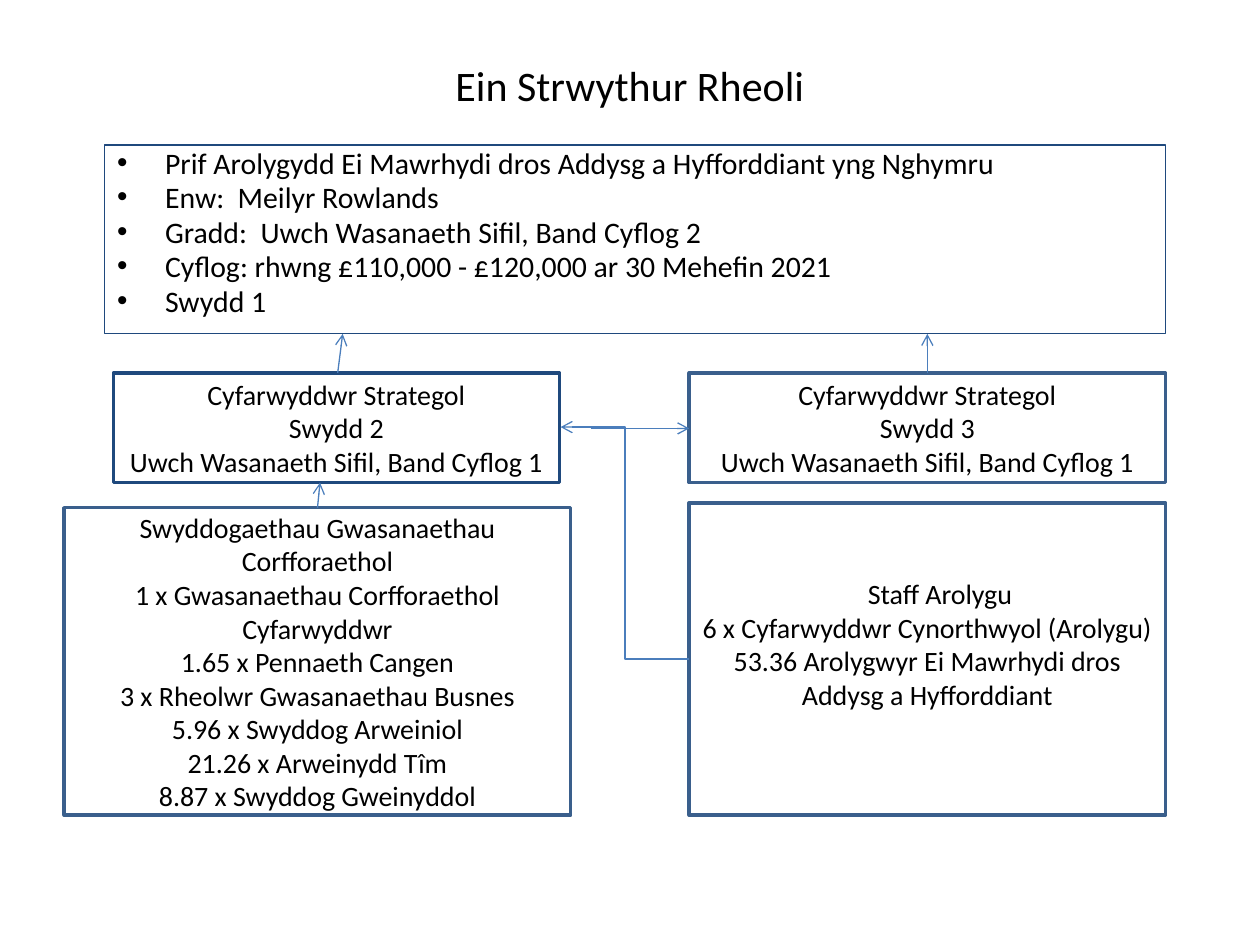
"""Build the management structure slide."""
from lxml import etree
from pptx import Presentation
from pptx import util as u
from pptx.dml.color import RGBColor
from pptx.enum import shapes, text
from pptx.oxml.ns import qn

COLORS = {"navy": "1F497D", "steel": "3A5F8C", "arrow": "4B7EBC", "ink": "000000"}
FONT = "Calibri"
TITLE = "Ein Strwythur Rheoli"
HEAD = [
    "Prif Arolygydd Ei Mawrhydi dros Addysg a Hyfforddiant yng Nghymru",
    "Enw:  Meilyr Rowlands",
    "Gradd:  Uwch Wasanaeth Sifil, Band Cyflog 2",
    "Cyflog: rhwng £110,000 - £120,000 ar 30 Mehefin 2021",
    "Swydd 1",
]
DIRECTOR, BAND = "Cyfarwyddwr Strategol", "Uwch Wasanaeth Sifil, Band Cyflog 1"
CORPORATE = [
    "Swyddogaethau Gwasanaethau Corfforaethol",
    "1 x Gwasanaethau Corfforaethol Cyfarwyddwr",
    "1.65 x Pennaeth Cangen",
    "3 x Rheolwr Gwasanaethau Busnes",
    "5.96 x Swyddog Arweiniol",
    "21.26 x Arweinydd Tîm",
    "8.87 x Swyddog Gweinyddol",
]
INSPECTION = [
    "Staff Arolygu",
    "6 x Cyfarwyddwr Cynorthwyol (Arolygu)",
    "53.36 Arolygwyr Ei Mawrhydi dros Addysg a Hyfforddiant",
]
TITLE_BOX = (0.75, 0.36, 8.5, 0.63)
HEAD_BOX = (0.83, 1.15, 8.42, 1.5)
BOXES = [
    ((0.9, 2.96, 3.54, 0.87), "navy", [DIRECTOR, "Swydd 2", BAND], 0.05),
    ((5.47, 2.96, 3.78, 0.87), "steel", [DIRECTOR, "Swydd 3", BAND], 0.05),
    ((0.51, 4.03, 4.02, 2.44), "steel", CORPORATE, 0.05),
    ((5.47, 3.99, 3.78, 2.48), "steel", INSPECTION, 0.29),
]
STRAIGHT, ELBOW = shapes.MSO_CONNECTOR.STRAIGHT, shapes.MSO_CONNECTOR.ELBOW
ARROWS = [
    (STRAIGHT, (2.52, 4.03, 2.54, 3.83)),
    (STRAIGHT, (4.69, 3.4, 5.47, 3.4)),
    (ELBOW, (5.47, 5.23, 4.45, 3.39)),
    (STRAIGHT, (2.68, 2.96, 2.72, 2.65)),
    (STRAIGHT, (7.36, 2.96, 7.36, 2.65)),
]
CENTRED = {"alignment": text.PP_ALIGN.CENTER}
LISTED = {"alignment": text.PP_ALIGN.LEFT, "line_spacing": 0.8, "space_before": u.Pt(3.4)}


def apply(obj, values):
    """Set each named attribute on an object."""
    for name, value in values.items():
        setattr(obj, name, value)


def place(sp, box):
    """Move and size a shape in inches."""
    apply(sp, dict(zip(("left", "top", "width", "height"), map(u.Inches, box))))


def outline(sp, color, width):
    """Give a shape a solid line."""
    sp.line.color.rgb = RGBColor.from_string(COLORS[color])
    sp.line.width = u.Pt(width)


def write(sp, lines, size, para, anchor=text.MSO_ANCHOR.MIDDLE, bottom=0.05):
    """Fill a shape with formatted paragraphs."""
    tf = sp.text_frame
    tf.text = "\n".join(lines)
    apply(tf, {"word_wrap": True, "auto_size": text.MSO_AUTO_SIZE.NONE,
               "vertical_anchor": anchor, "margin_bottom": u.Inches(bottom)})
    for p in tf.paragraphs:
        apply(p, para)
        for r in p.runs:
            apply(r.font, {"name": FONT, "size": u.Pt(size)})
            r.font.color.rgb = RGBColor.from_string(COLORS["ink"])


def add_arrow(s, kind, ends):
    """Draw a connector with an open arrowhead at its end."""
    sp = s.shapes.add_connector(kind, *map(u.Inches, ends))
    outline(sp, "arrow", 0.75)
    etree.SubElement(sp.line._get_or_add_ln(), qn("a:tailEnd"), type="arrow")
    etree.SubElement(sp._element.spPr, qn("a:effectLst"))


def main():
    """Assemble and save the slide."""
    prs = Presentation()
    apply(prs, {"slide_width": u.Inches(10), "slide_height": u.Inches(7.5)})
    s = prs.slides.add_slide(prs.slide_layouts[1])
    title, body = s.placeholders
    place(title, TITLE_BOX)
    write(title, [TITLE], 24, CENTRED)
    place(body, HEAD_BOX)
    outline(body, "navy", 0.75)
    write(body, HEAD, 17, LISTED, text.MSO_ANCHOR.TOP)
    for p in body.text_frame.paragraphs:
        pPr = p._p.get_or_add_pPr()
        pPr.set("marL", str(u.Inches(0.38)))
        pPr.set("indent", str(-u.Inches(0.38)))
    for box, color, lines, bottom in BOXES:
        sp = s.shapes.add_shape(shapes.MSO_SHAPE.RECTANGLE, *map(u.Inches, box))
        sp.shadow.inherit = False
        sp.fill.background()
        outline(sp, color, 2)
        write(sp, lines, 16, CENTRED, bottom=bottom)
    staff = sp.text_frame.paragraphs[0]
    staff._p.get_or_add_pPr().set("marL", str(u.Inches(0.2)))
    for kind, ends in ARROWS:
        add_arrow(s, kind, ends)
    prs.save("out.pptx")


if __name__ == "__main__":
    main()
